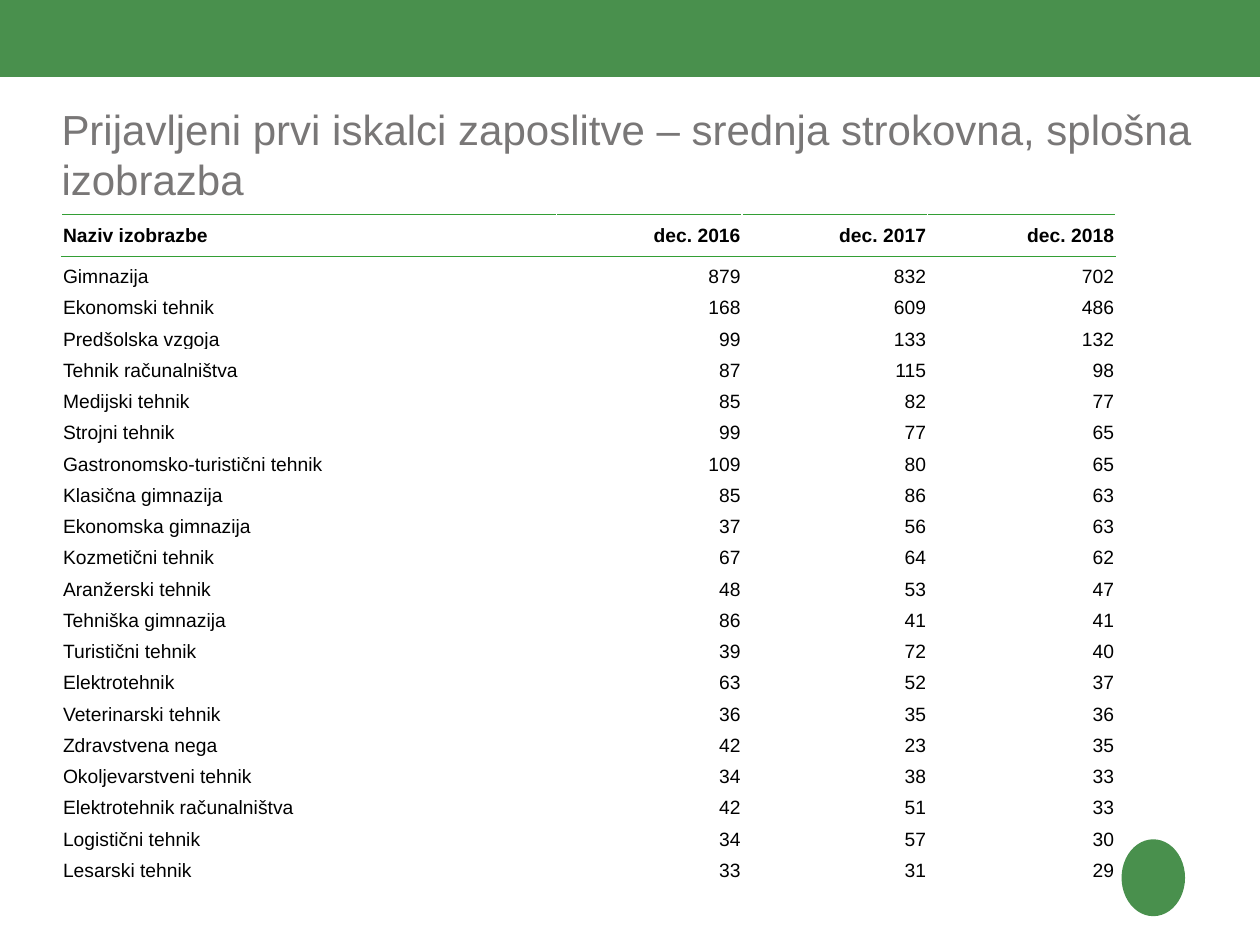
import lxml.etree
import pptx
import pptx.dml.color
import pptx.enum.shapes
import pptx.enum.text
import pptx.oxml.ns
import pptx.util

Cm = pptx.util.Cm
Pt = pptx.util.Pt
ALIGN = pptx.enum.text.PP_ALIGN
ANCHOR = pptx.enum.text.MSO_ANCHOR
SHAPE = pptx.enum.shapes.MSO_SHAPE
HUES = {"green": "49904D", "rule": "339E35", "gray": "797777", "black": "000000"}


def write(frame, text, size=11, hue="black", bold=False, align=ALIGN.LEFT, pitch=None):
    line = frame.paragraphs[0]
    line.text = text
    line.alignment = align
    line.line_spacing = pitch
    font = line.runs[0].font
    font.name = "Arial"
    font.size = Pt(size)
    font.bold = bold
    font.color.rgb = pptx.dml.color.RGBColor.from_string(HUES[hue])


def border(cell, side):
    qn = pptx.oxml.ns.qn
    props = cell._tc.get_or_add_tcPr()
    edge = lxml.etree.SubElement(props, qn("a:" + side), w=str(Pt(0.5)))
    fill = lxml.etree.SubElement(edge, qn("a:solidFill"))
    lxml.etree.SubElement(fill, qn("a:srgbClr"), val=HUES["rule"])


deck = pptx.Presentation()
deck.slide_width = Cm(25.4)
deck.slide_height = Cm(19.05)
slide = deck.slides.add_slide(deck.slide_layouts[5])

marks = [
    (SHAPE.RECTANGLE, 0, -0.02, 25.4, 1.57),
    (SHAPE.OVAL, 22.61, 16.92, 1.28, 1.55),
]
for kind, *place in marks:
    mark = slide.shapes.add_shape(kind, *map(Cm, place))
    mark.shadow.inherit = False
    mark.fill.solid()
    mark.fill.fore_color.rgb = pptx.dml.color.RGBColor.from_string(HUES["green"])
    mark.line.fill.background()

title = slide.shapes.title
title.left, title.top, title.width, title.height = map(Cm, (1.24, 2.08, 23.52, 1.8))
frame = title.text_frame
frame.margin_left = frame.margin_right = frame.margin_top = frame.margin_bottom = 0
frame.vertical_anchor = ANCHOR.TOP
frame.word_wrap = True
frame.auto_size = pptx.enum.text.MSO_AUTO_SIZE.NONE
write(
    frame,
    "Prijavljeni prvi iskalci zaposlitve – srednja strokovna, splošna izobrazba",
    size=24,
    hue="gray",
    pitch=Pt(28.8),
)

rows = [
    ("Naziv izobrazbe", "dec. 2016", "dec. 2017", "dec. 2018"),
    ("Gimnazija", 879, 832, 702),
    ("Ekonomski tehnik", 168, 609, 486),
    ("Predšolska vzgoja", 99, 133, 132),
    ("Tehnik računalništva", 87, 115, 98),
    ("Medijski tehnik", 85, 82, 77),
    ("Strojni tehnik", 99, 77, 65),
    ("Gastronomsko-turistični tehnik", 109, 80, 65),
    ("Klasična gimnazija", 85, 86, 63),
    ("Ekonomska gimnazija", 37, 56, 63),
    ("Kozmetični tehnik", 67, 64, 62),
    ("Aranžerski tehnik", 48, 53, 47),
    ("Tehniška gimnazija", 86, 41, 41),
    ("Turistični tehnik", 39, 72, 40),
    ("Elektrotehnik", 63, 52, 37),
    ("Veterinarski tehnik", 36, 35, 36),
    ("Zdravstvena nega", 42, 23, 35),
    ("Okoljevarstveni tehnik", 34, 38, 33),
    ("Elektrotehnik računalništva", 42, 51, 33),
    ("Logistični tehnik", 34, 57, 30),
    ("Lesarski tehnik", 33, 31, 29),
]
widths = [9.98, 3.74, 3.74, 3.79]
grid = slide.shapes.add_table(
    len(rows), len(widths), Cm(1.24), Cm(4.32), Cm(sum(widths)), Cm(13.41)
).table
grid.first_row = False
grid.horz_banding = False
for col, width in zip(grid.columns, widths):
    col.width = Cm(width)

for r, row in enumerate(rows):
    head = r == 0
    grid.rows[r].height = Cm(0.85 if head else 0.63)
    for c, value in enumerate(row):
        cell = grid.cell(r, c)
        cell.margin_left = cell.margin_right = cell.margin_top = Cm(0.03)
        cell.margin_bottom = 0
        cell.vertical_anchor = ANCHOR.MIDDLE if head else ANCHOR.BOTTOM
        if r < 2:
            border(cell, "lnT")
        if head:
            border(cell, "lnB")
        cell.fill.background()
        align = ALIGN.RIGHT if c else ALIGN.LEFT
        write(cell.text_frame, str(value), bold=head, align=align)

deck.save("out.pptx")
